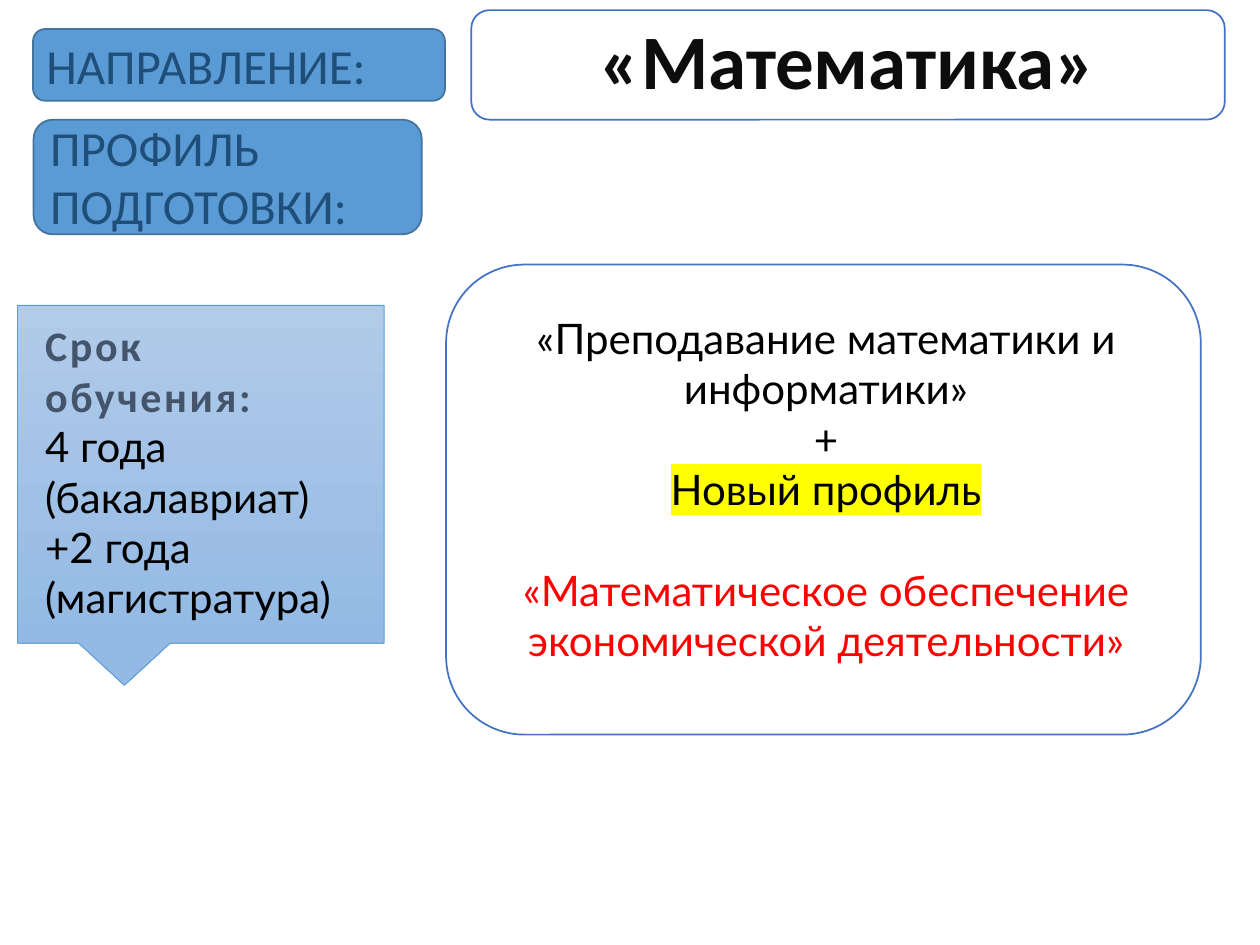
from lxml import etree
from pptx import Presentation
from pptx.dml.color import RGBColor
from pptx.enum.shapes import MSO_SHAPE
from pptx.enum.text import MSO_ANCHOR, MSO_AUTO_SIZE, PP_ALIGN
from pptx.oxml.ns import qn
from pptx.util import Pt

ROUND = MSO_SHAPE.ROUNDED_RECTANGLE
CALL = MSO_SHAPE.RECTANGULAR_CALLOUT
MID = MSO_ANCHOR.MIDDLE
GROW = MSO_AUTO_SIZE.SHAPE_TO_FIT_TEXT
LEFT, CENTER = PP_ALIGN.LEFT, PP_ALIGN.CENTER
COLORS = {
    "white": "FFFFFF", "black": "000000", "ink": "0D0D0D", "edge": "3A5274",
    "rim": "4472C4", "blue": "5B9BD5", "dark": "43739E", "navy": "1F4E79",
    "slate": "44546A", "red": "FF0000", "mark": "FFFF00",
    "pale": "B1CBE9", "deep": "93B9E4",
}


class Board:
    """Holds the style and the current slide, and draws each kind of element."""

    def __init__(self, deck):
        self.slide = deck.slides.add_slide(deck.slide_layouts[5])
        self.shapes = self.slide.shapes

    def color(self, name):
        return RGBColor.from_string(COLORS[name])

    def place(self, shape, box):
        shape.left, shape.top, shape.width, shape.height = map(Pt, box)

    def solid(self, node, tag, name):
        item = etree.SubElement(node, qn(tag))
        etree.SubElement(item, qn("a:srgbClr"), val=COLORS[name])
        return item

    def run(self, para, text, size, color, face="Calibri", bold=False, space=0, mark=None):
        run = para.add_run()
        run.text = text
        font = run.font
        font.size, font.bold = Pt(size), bold
        font.color.rgb = self.color(color)
        props = run._r.get_or_add_rPr()
        if mark:
            self.solid(props, "a:highlight", mark)
        if space:
            props.set("spc", str(space))
        font.name = face
        return props

    def card(self, kind, box, fill, line, width=1):
        shape = self.shapes.add_shape(kind, *map(Pt, box))
        shape.shadow.inherit = False
        if isinstance(fill, tuple):
            shape.fill.gradient()
            shape.fill.gradient_angle = 270
            for stop, name in zip(shape.fill.gradient_stops, fill):
                stop.color.rgb = self.color(name)
        else:
            shape.fill.solid()
            shape.fill.fore_color.rgb = self.color(fill)
        shape.line.color.rgb = self.color(line)
        shape.line.width = Pt(width)

    def head(self, box, text):
        title = self.shapes.title
        title.element.getparent().append(title.element)
        self.place(title, box)
        frame = title.text_frame
        frame.vertical_anchor = MID
        para = frame.paragraphs[0]
        para.alignment, para.line_spacing = CENTER, 0.9
        props = self.run(para, text, 44, "ink", bold=True)
        line = etree.Element(qn("a:ln"), w=str(Pt(1)))
        self.solid(line, "a:solidFill", "edge")
        props.insert(0, line)

    def text(self, box, lines, align=LEFT):
        frame = self.shapes.add_textbox(*map(Pt, box)).text_frame
        frame.word_wrap, frame.auto_size = True, GROW
        for i, (words, style, gap) in enumerate(lines):
            para = frame.add_paragraph() if i else frame.paragraphs[0]
            para.alignment = align
            if gap:
                para.space_before = Pt(gap)
            self.run(para, words, **style)


def main():
    deck = Presentation()
    deck.slide_width, deck.slide_height = Pt(720), Pt(540)
    board = Board(deck)
    label = dict(size=28, color="navy")
    body = dict(size=24, color="black", face="Lato")
    term = dict(size=24, color="slate", bold=True, space=150)

    board.card(ROUND, (269.3, 5.8, 430.6, 62.6), "white", "rim")
    board.head((204.5, -2.2, 560.2, 78.5), "«Математика»")

    board.card(CALL, (10, 174.5, 209.5, 193), ("pale", "deep"), "blue", 0.5)
    board.text((18.7, 179.3, 191.5, 203.8), [
        ("Срок обучения:", term, 0),
        ("4 года (бакалавриат)", body, 0),
        ("+2 года (магистратура)", body, 0),
    ])

    board.card(ROUND, (18.9, 16.6, 235.4, 41), "blue", "dark")
    board.text((19.4, 16.6, 212.4, 74.9), [("НАПРАВЛЕНИЕ:", label, 0)])
    board.card(ROUND, (19.2, 68.4, 221.8, 65.5), "blue", "dark")
    board.text((21.6, 63.4, 193.7, 74.9), [("ПРОФИЛЬ ПОДГОТОВКИ:", label, 0)])

    board.card(ROUND, (254.9, 151.2, 431.3, 268.6), "white", "rim")
    board.text((269.3, 175, 405.4, 244.8), [
        ("«Преподавание математики и информатики»", body, 0),
        ("+", body, 0),
        ("Новый профиль", body | dict(mark="mark"), 0),
        ("«Математическое обеспечение экономической деятельности»",
         body | dict(color="red"), 28.8),
    ], CENTER)
    deck.save("out.pptx")


if __name__ == "__main__":
    main()
